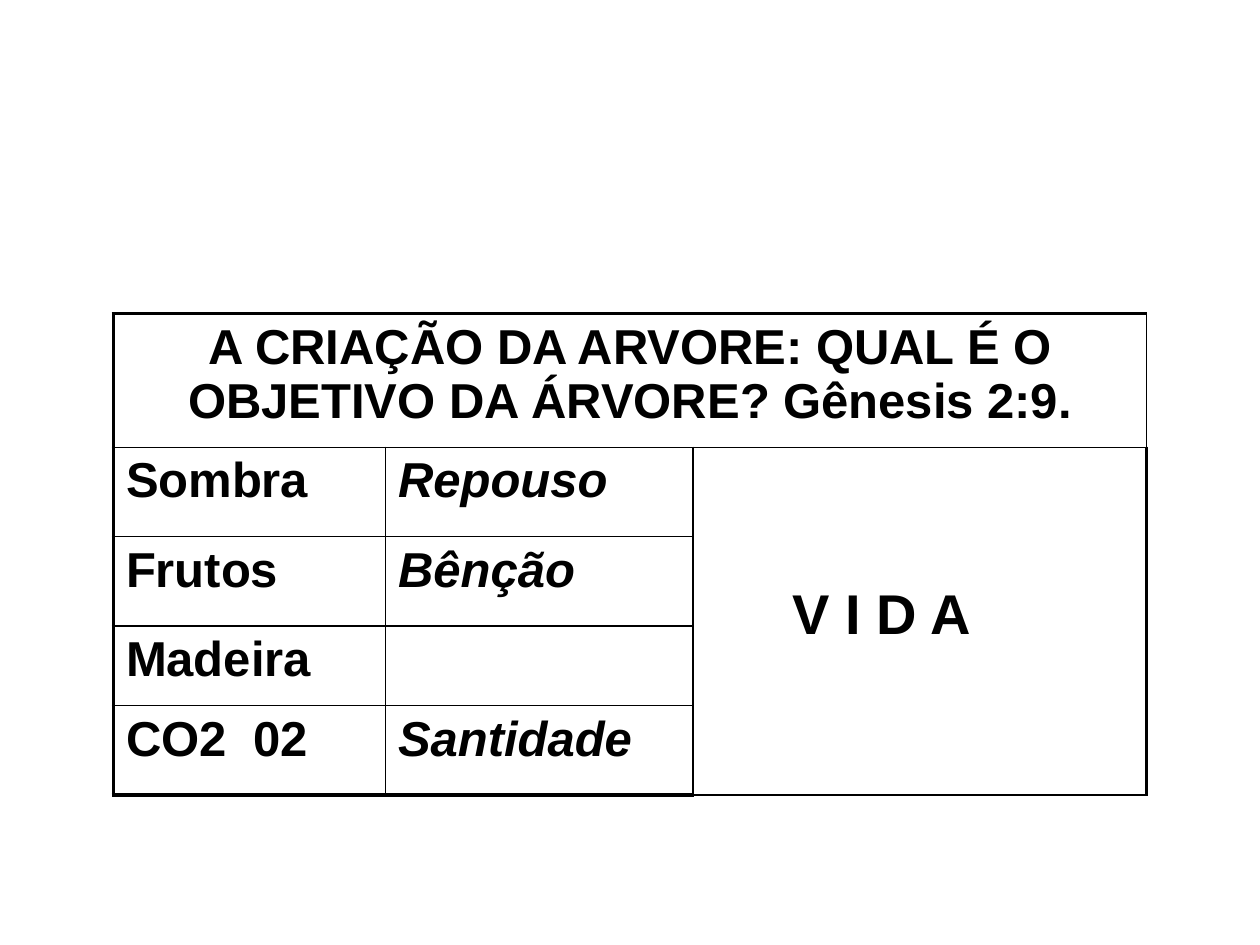
from lxml import etree
from pptx import Presentation
from pptx import util as u
from pptx.dml.color import RGBColor
from pptx.enum import text
from pptx.oxml import ns

BLACK = RGBColor(0, 0, 0)
OUTER, INNER = 2.25, 1
COLUMNS = [2.16, 2.44, 0.32, 3.28]
ROWS = [1.06, 0.71, 0.71, 0.63, 0.71]
PURPOSES = [("Sombra", "Repouso"), ("Frutos", "Bênção"), ("Madeira", ""), ("CO2  02", "Santidade")]


def set_border(cell, side, width):
    """Draw one side (L, R, T or B) in black; a width of 0 hides it."""
    line = etree.SubElement(cell._tc.get_or_add_tcPr(), ns.qn(f"a:ln{side}"), w=str(u.Pt(width)))
    if width:
        fill = etree.SubElement(line, ns.qn("a:solidFill"))
        etree.SubElement(fill, ns.qn("a:srgbClr"), val=str(BLACK))
    else:
        etree.SubElement(line, ns.qn("a:noFill"))


def write(cell, words, size=28, italic=False):
    cell.text_frame.text = words
    font = cell.text_frame.paragraphs[0].font
    for item in [font] + [run.font for run in cell.text_frame.paragraphs[0].runs]:
        item.name, item.size = "Arial", u.Pt(size)
        item.bold, item.italic = True, italic
        item.color.rgb = BLACK


presentation = Presentation()
presentation.slide_width, presentation.slide_height = u.Inches(10), u.Inches(7.5)
slide = presentation.slides.add_slide(presentation.slide_layouts[6])

table = slide.shapes.add_table(
    len(ROWS), len(COLUMNS), u.Inches(0.9), u.Inches(2.49),
    u.Inches(sum(COLUMNS)), u.Inches(sum(ROWS))).table
table.first_row = table.horz_banding = False
for column, width in zip(table.columns, COLUMNS):
    column.width = u.Inches(width)
for row, height in zip(table.rows, ROWS):
    row.height = u.Inches(height)

# Heavy outline, thin inner lines, none between the two right-hand columns
last_row, last_column = len(ROWS) - 1, len(COLUMNS) - 1
for r in range(len(ROWS)):
    for c in range(len(COLUMNS)):
        cell = table.cell(r, c)
        set_border(cell, "L", OUTER if c == 0 else 0 if c == last_column else INNER)
        set_border(cell, "R", OUTER if c == last_column else 0 if c == last_column - 1 else INNER)
        set_border(cell, "T", OUTER if r == 0 else INNER)
        set_border(cell, "B", OUTER if r == last_row else INNER)
        cell.fill.background()

heading = table.cell(0, 0)
heading.merge(table.cell(0, last_column))
write(heading, "A CRIAÇÃO DA ARVORE: QUAL É O OBJETIVO DA ÁRVORE? Gênesis 2:9.")
heading.text_frame.paragraphs[0].alignment = text.PP_ALIGN.CENTER

for r, (gift, meaning) in enumerate(PURPOSES, start=1):
    write(table.cell(r, 0), gift)
    write(table.cell(r, 1), meaning, italic=True)

for c in (last_column - 1, last_column):
    table.cell(1, c).merge(table.cell(last_row, c))
life = table.cell(1, last_column)
write(life, "V I D A", size=32)
life.vertical_anchor = text.MSO_ANCHOR.MIDDLE
life.margin_left = u.Inches(0.47)
life.margin_bottom = u.Inches(0.15)

presentation.save("out.pptx")
